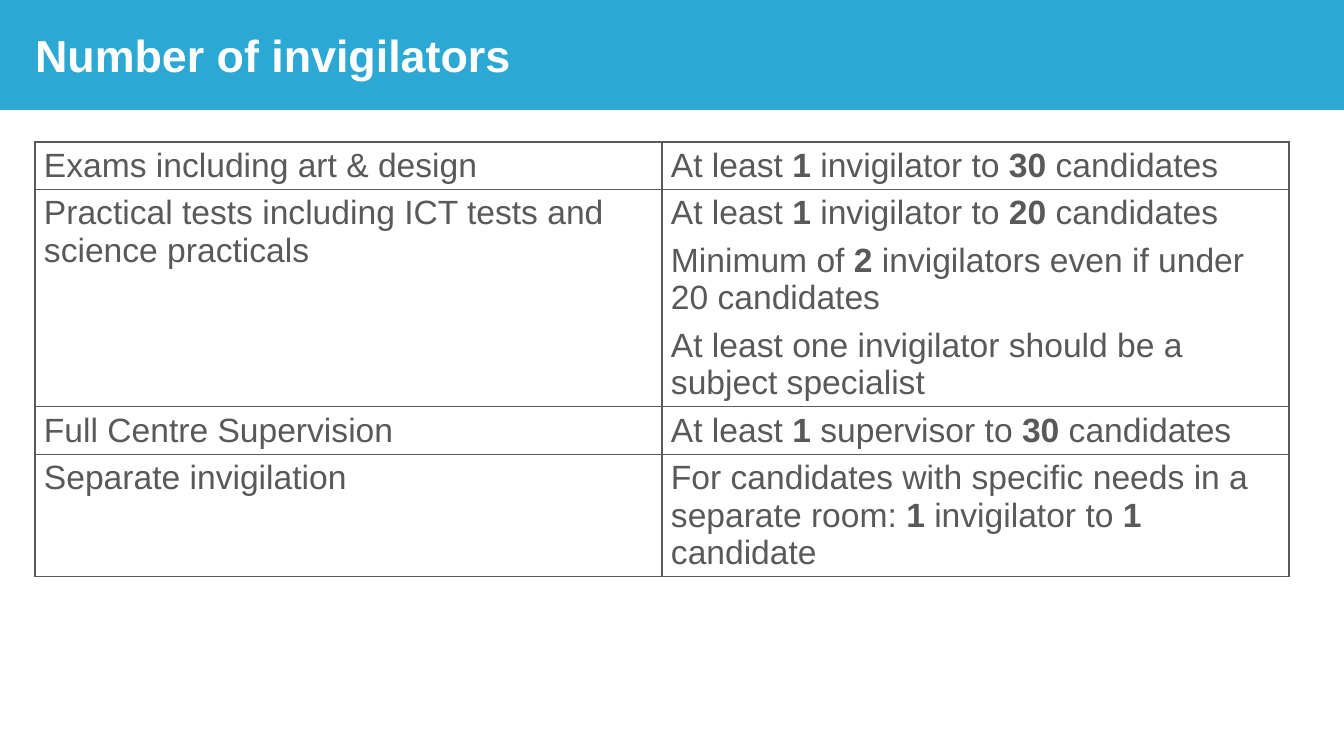
from dataclasses import dataclass

from lxml.etree import SubElement
from pptx import Presentation
from pptx.dml.color import RGBColor
from pptx.enum.shapes import MSO_SHAPE
from pptx.enum.text import MSO_ANCHOR, MSO_AUTO_SIZE, PP_ALIGN
from pptx.oxml.ns import qn
from pptx.util import Pt

EMU_PER_PX = 914400 / 100.8
SLIDE_WIDTH, SLIDE_HEIGHT = 1344, 756

RATIOS = [
    (["Exams including art & design"],
     ["At least *1* invigilator to *30* candidates"]),
    (["Practical tests including ICT tests and science practicals"],
     ["At least *1 *invigilator to *20 *candidates",
      "Minimum of *2 *invigilators even if under 20 candidates",
      "At least one invigilator should be a subject specialist"]),
    (["Full Centre Supervision"],
     ["At least *1* supervisor to *30* candidates"]),
    (["Separate invigilation"],
     ["For candidates with specific needs in a separate room: "
      "*1* invigilator to *1* candidate"]),
]
ROW_HEIGHTS = [47, 217, 47, 122]


@dataclass(frozen=True)
class Theme:
    font: str = "Arial"
    banner: str = "2CA8D4"
    paper: str = "FFFFFF"
    ink: str = "595959"
    title_size: int = 32
    body_size: int = 24
    paragraph_gap: float = 7.2
    border_width: int = 1


def px(length):
    return round(length * EMU_PER_PX)


class SlideBuilder:
    def __init__(self, presentation, theme):
        self.theme = theme
        self.slide = presentation.slides.add_slide(presentation.slide_layouts[5])

    def add_run(self, paragraph, text, size, color, bold):
        run = paragraph.add_run()
        run.text = text
        run.font.name = self.theme.font
        run.font.size = Pt(size)
        run.font.bold = bold
        run.font.color.rgb = RGBColor.from_string(color)

    def banner(self, height):
        shape = self.slide.shapes.add_shape(
            MSO_SHAPE.RECTANGLE, 0, 0, px(SLIDE_WIDTH), px(height))
        shape.shadow.inherit = False
        shape.fill.solid()
        shape.fill.fore_color.rgb = RGBColor.from_string(self.theme.banner)
        shape.line.fill.background()
        self.slide.shapes.title.element.addprevious(shape.element)

    def title(self, text, left, top, width, height):
        title = self.slide.shapes.title
        title.left, title.top = px(left), px(top)
        title.width, title.height = px(width), px(height)
        frame = title.text_frame
        frame.auto_size = MSO_AUTO_SIZE.NONE
        frame.vertical_anchor = MSO_ANCHOR.MIDDLE
        paragraph = frame.paragraphs[0]
        paragraph.alignment = PP_ALIGN.LEFT
        self.add_run(paragraph, text, self.theme.title_size, self.theme.paper, True)

    def border(self, cell):
        properties = cell._tc.get_or_add_tcPr()
        for side in ("lnL", "lnR", "lnT", "lnB"):
            line = SubElement(properties, qn(f"a:{side}"),
                              w=str(Pt(self.theme.border_width)))
            fill = SubElement(line, qn("a:solidFill"))
            SubElement(fill, qn("a:srgbClr"), val=self.theme.ink)

    def fill_cell(self, cell, texts):
        self.border(cell)
        cell.fill.solid()
        cell.fill.fore_color.rgb = RGBColor.from_string(self.theme.paper)
        cell.margin_left = cell.margin_right = px(9)
        cell.margin_top = cell.margin_bottom = px(5)
        frame = cell.text_frame
        for index, text in enumerate(texts):
            paragraph = frame.add_paragraph() if index else frame.paragraphs[0]
            if index:
                paragraph.space_before = Pt(self.theme.paragraph_gap)
            for position, part in enumerate(text.split("*")):
                if part:
                    self.add_run(paragraph, part, self.theme.body_size,
                                 self.theme.ink, position % 2 == 1)

    def table(self, rows, heights, left, top, column_width):
        columns = len(rows[0])
        table = self.slide.shapes.add_table(
            len(rows), columns, px(left), px(top),
            px(column_width * columns), px(sum(heights))).table
        table.first_row = table.horz_banding = False
        for column in table.columns:
            column.width = px(column_width)
        for row, height, contents in zip(table.rows, heights, rows):
            row.height = px(height)
            for cell, texts in zip(row.cells, contents):
                self.fill_cell(cell, texts)


def main():
    presentation = Presentation()
    presentation.slide_width = px(SLIDE_WIDTH)
    presentation.slide_height = px(SLIDE_HEIGHT)
    builder = SlideBuilder(presentation, Theme())
    builder.banner(110)
    builder.title("Number of invigilators", 25, 12, 1303, 86)
    builder.table(RATIOS, ROW_HEIGHTS, 35, 142, 627)
    presentation.save("out.pptx")


if __name__ == "__main__":
    main()
